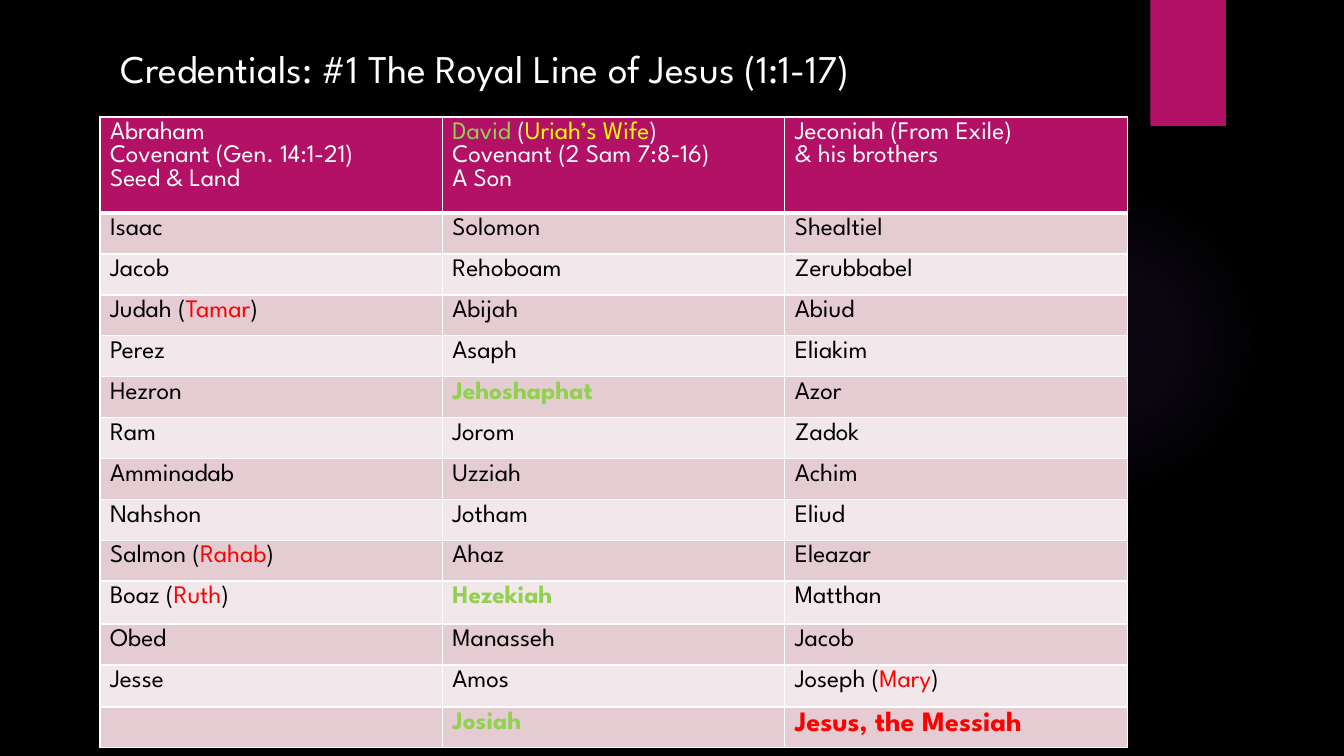
from pptx import Presentation
from pptx.dml.color import RGBColor
from pptx.enum.shapes import MSO_SHAPE as Shape
from pptx.oxml import parse_xml
from pptx.oxml.ns import nsdecls
from pptx.util import Pt

FONT = "League Spartan"
WHITE, BLACK, MAGENTA, VIOLET = "FFFFFF", "000000", "B31166", "9B6BF2"
RED, GREEN, YELLOW = "FF0000", "92D050", "FFFF00"
BANDS = ("E5CCD3", "F2E7EA")
COLUMN_WIDTH = 244.6
ROW_HEIGHTS = [68.7] + [29.2] * 9 + [30.7, 29.2, 30, 29.2]


def red(text):
    """Mark a woman's name."""
    return text, {"color": RED}


def king(text):
    """Mark a faithful king's name."""
    return text, {"color": GREEN, "bold": True}


HEADER = [
    [["Abraham"], ["Covenant (Gen. 14:1-21)"], ["Seed & Land"]],
    [[("David ", {"color": GREEN}), "(", ("Uriah’s Wife", {"color": YELLOW}), ")"],
     ["Covenant (2 Sam 7:8-16)"], ["A Son"]],
    [["Jeconiah (From Exile)"], ["& his brothers"]],
]
GENERATIONS = [
    [["Isaac"], ["Jacob"], ["Judah (", red("Tamar"), ")"], ["Perez"], ["Hezron"],
     ["Ram"], ["Amminadab"], ["Nahshon"], ["Salmon (", red("Rahab"), ")"],
     ["Boaz (", red("Ruth"), ")"], ["Obed"], ["Jesse"], []],
    [["Solomon"], ["Rehoboam"], ["Abijah"], ["Asaph"], [king("Jehoshaphat")],
     ["Jorom"], ["Uzziah"], ["Jotham"], ["Ahaz"], [king("Hezekiah")],
     ["Manasseh"], ["Amos"], [king("Josiah")]],
    [["Shealtiel"], ["Zerubbabel"], ["Abiud"], ["Eliakim"], ["Azor"], ["Zadok"],
     ["Achim"], ["Eliud"], ["Eleazar"], ["Matthan"], ["Jacob"],
     ["Joseph (", red("Mary"), ")"],
     [("Jesus, the Messiah", {"color": RED, "bold": True, "size": 20})]],
]


def rgb(color):
    """Turn a hex string into a colour."""
    return RGBColor.from_string(color)


def add_run(paragraph, text, size=18, color=BLACK, bold=False):
    """Append formatted text to a paragraph."""
    run = paragraph.add_run()
    run.text = text
    run.font.name, run.font.size, run.font.bold = FONT, Pt(size), bold
    run.font.color.rgb = rgb(color)


def add_plain_shape(slide, kind, left, top, width, height):
    """Add a shape without line or shadow."""
    shape = slide.shapes.add_shape(kind, Pt(left), Pt(top), Pt(width), Pt(height))
    shape.shadow.inherit = False
    shape.line.fill.background()
    return shape


def add_glow(slide, left, top, diameter):
    """Add a faint circle that fades outwards."""
    glow = add_plain_shape(slide, Shape.OVAL, left, top, diameter, diameter)
    stops = "".join(
        f'<a:gs pos="{position}000"><a:srgbClr val="{VIOLET}">'
        f'<a:alpha val="{alpha}000"/></a:srgbClr></a:gs>'
        for position, alpha in ((0, 7), (36, 6), (69, 0)))
    glow.element.spPr.insert(2, parse_xml(
        f'<a:gradFill {nsdecls("a")}><a:gsLst>{stops}</a:gsLst><a:path path="circle">'
        '<a:fillToRect l="50000" t="50000" r="50000" b="50000"/></a:path></a:gradFill>'))


def add_title(slide, text):
    """Add the slide title."""
    box = slide.shapes.add_textbox(Pt(79.2), Pt(20.9), Pt(702), Pt(63.4))
    frame = box.text_frame
    frame.word_wrap = True
    frame.margin_top = Pt(10.8)
    add_run(frame.paragraphs[0], text, size=28, color=WHITE)


def fill_cell(cell, lines, fill, color, bottom=1):
    """Give a cell its borders, fill and text."""
    properties = cell._tc.get_or_add_tcPr()
    for side, width in (("L", 1), ("R", 1), ("T", 1), ("B", bottom)):
        properties.append(parse_xml(
            f'<a:ln{side} {nsdecls("a")} w="{Pt(width)}"><a:solidFill>'
            f'<a:srgbClr val="{WHITE}"/></a:solidFill></a:ln{side}>'))
    cell.fill.solid()
    cell.fill.fore_color.rgb = rgb(fill)
    frame = cell.text_frame
    for index, line in enumerate(lines):
        paragraph = frame.add_paragraph() if index else frame.paragraphs[0]
        paragraph.font.size = Pt(18)
        for part in line:
            text, style = (part, {}) if isinstance(part, str) else part
            add_run(paragraph, text, **{"color": color, **style})


def add_genealogy(slide):
    """Add the table of the three lines of descent."""
    table = slide.shapes.add_table(
        len(ROW_HEIGHTS), len(HEADER), Pt(71.4), Pt(83.6),
        Pt(COLUMN_WIDTH * len(HEADER)), Pt(sum(ROW_HEIGHTS))).table
    for row, height in zip(table.rows, ROW_HEIGHTS):
        row.height = Pt(height)
    for column, (heading, names) in enumerate(zip(HEADER, GENERATIONS)):
        table.columns[column].width = Pt(COLUMN_WIDTH)
        fill_cell(table.cell(0, column), heading, MAGENTA, WHITE, bottom=3)
        for index, name in enumerate(names):
            fill_cell(table.cell(index + 1, column), [name], BANDS[index % 2], BLACK)


def main():
    """Build and save the slide."""
    presentation = Presentation()
    presentation.slide_width, presentation.slide_height = Pt(960), Pt(540)
    slide = presentation.slides.add_slide(presentation.slide_layouts[6])
    slide.background.fill.solid()
    slide.background.fill.fore_color.rgb = rgb(BLACK)
    add_glow(slide, 677.5, 131.8, 221.8)
    banner = add_plain_shape(slide, Shape.RECTANGLE, 821.7, 0, 54, 90)
    banner.fill.solid()
    banner.fill.fore_color.rgb = rgb(MAGENTA)
    add_genealogy(slide)
    add_title(slide, "Credentials: #1 The Royal Line of Jesus (1:1-17)")
    presentation.save("out.pptx")


if __name__ == "__main__":
    main()
